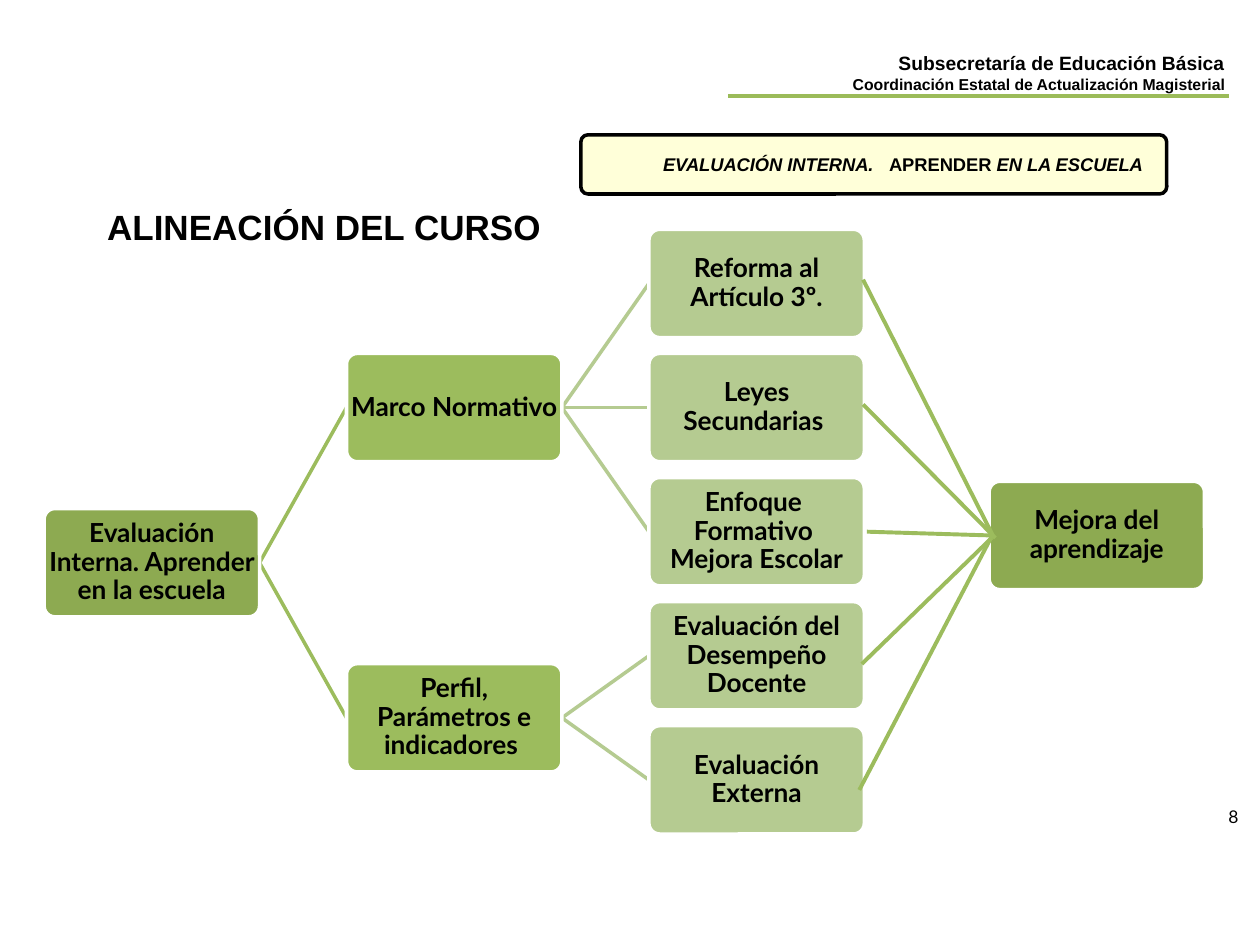
from dataclasses import dataclass

from lxml import etree
from pptx import Presentation
from pptx.dml.color import RGBColor
from pptx.enum import shapes, text
from pptx.oxml.ns import qn
from pptx.util import Inches, Pt


@dataclass(frozen=True)
class Theme:
    black: str = "000000"
    white: str = "FFFFFF"
    cream: str = "FFFFD9"
    rule: str = "9BBB59"
    levels: tuple = ("8DAA51", "9CBC5D", "B5CB91")
    heading: str = "Arial"
    body: str = "Lato"
    title_size: float = 20
    node_size: float = 15
    office_size: float = 11
    banner_size: float = 10.5
    number_size: float = 10
    unit_size: float = 9


THEME = Theme()
LEFT, CENTER, RIGHT = text.PP_ALIGN.LEFT, text.PP_ALIGN.CENTER, text.PP_ALIGN.RIGHT

TITLE = "ALINEACIÓN DEL CURSO"
OFFICES = [("Subsecretaría de Educación Básica", THEME.office_size),
           ("Coordinación Estatal de Actualización Magisterial", THEME.unit_size)]
BANNER = [("EVALUACIÓN INTERNA.   ", True), ("APRENDER", False), (" EN LA ESCUELA", True)]
PAGE_NUMBER = "8"
COURSE = ("Evaluación Interna. Aprender en la escuela", [
    ("Marco Normativo", [
        ("Reforma al Artículo 3º.", []),
        ("Leyes Secundarias ", []),
        ("Enfoque \vFormativo \vMejora Escolar", [])]),
    ("Perfil, Parámetros e indicadores ", [
        ("Evaluación del Desempeño Docente", []),
        ("Evaluación Externa", [])])])
GOAL = "Mejora del aprendizaje"
GOAL_LINKS = [((6.85, 2.22), (7.88, 4.25)), ((6.85, 3.21), (7.9, 4.27)),
              ((6.88, 4.22), (7.88, 4.25)), ((6.84, 5.27), (7.87, 4.27)),
              ((6.82, 6.27), (7.88, 4.24))]

NODE_W, NODE_H = 1.71, 0.86
TREE_LEFT, TREE_TOP = 0.35, 1.82
COLUMN_STEP, ROW_STEP = 2.4, 0.985
GOAL_AT = (7.85, 3.82)


def set_font(font, name, size, bold=True, italic=False):
    for key, value in dict(name=name, size=Pt(size), bold=bold, italic=italic).items():
        setattr(font, key, value)
    font.color.rgb = RGBColor.from_string(THEME.black)


def set_frame(frame, side=0.1, edge=0.05, anchor=text.MSO_ANCHOR.TOP):
    settings = dict(word_wrap=True, auto_size=text.MSO_AUTO_SIZE.NONE, vertical_anchor=anchor,
                    margin_left=Inches(side), margin_right=Inches(side),
                    margin_top=Inches(edge), margin_bottom=Inches(edge))
    for key, value in settings.items():
        setattr(frame, key, value)


def add_text(slide, box, lines, name, align=LEFT, bold=True):
    frame = slide.shapes.add_textbox(*map(Inches, box)).text_frame
    set_frame(frame)
    for index, (words, size) in enumerate(lines):
        paragraph = frame.add_paragraph() if index else frame.paragraphs[0]
        paragraph.text = words
        paragraph.alignment = align
        set_font(paragraph.font, name, size, bold)


def add_panel(slide, box, fill, line, corner):
    panel = slide.shapes.add_shape(shapes.MSO_SHAPE.ROUNDED_RECTANGLE, *map(Inches, box))
    panel.shadow.inherit = False
    panel.adjustments[0] = corner
    panel.fill.solid()
    panel.fill.fore_color.rgb = RGBColor.from_string(fill)
    panel.line.color.rgb = RGBColor.from_string(line)
    panel.line.width = Pt(2)
    return panel


def add_node(slide, words, left, top, fill):
    node = add_panel(slide, (left, top, NODE_W, NODE_H), fill, THEME.white, 0.1)
    set_frame(node.text_frame, 0.01, 0.01, text.MSO_ANCHOR.MIDDLE)
    paragraph = node.text_frame.paragraphs[0]
    paragraph.text = words
    paragraph.alignment = CENTER
    paragraph.line_spacing = 0.9
    set_font(paragraph.font, THEME.body, THEME.node_size)


def add_link(slide, start, end, color, width):
    link = slide.shapes.add_connector(shapes.MSO_CONNECTOR.STRAIGHT, *map(Inches, start + end))
    link.line.color.rgb = RGBColor.from_string(color)
    link.line.width = Pt(width)
    etree.SubElement(link._element.spPr, qn("a:effectLst"))


def place_tree(branch, level, row, nodes, links):
    words, children = branch
    left = TREE_LEFT + level * COLUMN_STEP
    tops = []
    for child in children:
        top, row = place_tree(child, level + 1, row, nodes, links)
        tops.append(top)
    if tops:
        top = (tops[0] + tops[-1]) / 2
    else:
        top = TREE_TOP + row * ROW_STEP
        row += 1
    middle = NODE_H / 2
    for child_top in tops:
        links.append(((left + NODE_W, top + middle),
                      (left + COLUMN_STEP, child_top + middle), THEME.levels[level + 1]))
    nodes.append((words, left, top, THEME.levels[level]))
    return top, row


def main():
    deck = Presentation()
    deck.slide_width, deck.slide_height = Inches(10), Inches(7.5)
    slide = deck.slides.add_slide(deck.slide_layouts[5])

    title = slide.shapes.title
    for key, value in zip(("left", "top", "width", "height"), (0.75, 1.58, 6.54, 0.44)):
        setattr(title, key, Inches(value))
    set_frame(title.text_frame)
    heading = title.text_frame.paragraphs[0]
    heading.text = TITLE
    heading.alignment = LEFT
    set_font(heading.font, THEME.heading, THEME.title_size)

    add_text(slide, (4.03, 0.36, 5.79, 0.44), OFFICES, THEME.heading, RIGHT)
    add_link(slide, (9.75, 0.76), (5.78, 0.76), THEME.rule, 2.25)
    add_text(slide, (9.65, 6.35, 0.35, 0.27), [(PAGE_NUMBER, THEME.number_size)],
             THEME.body, bold=False)

    banner = add_panel(slide, (4.61, 1.07, 4.65, 0.47), THEME.cream, THEME.black, 0.12)
    set_frame(banner.text_frame, 0.17, 0.05, text.MSO_ANCHOR.MIDDLE)
    slogan = banner.text_frame.paragraphs[0]
    slogan.alignment = RIGHT
    for words, italic in BANNER:
        run = slogan.add_run()
        run.text = words
        set_font(run.font, THEME.heading, THEME.banner_size, italic=italic)

    nodes, links = [], []
    place_tree(COURSE, 0, 0, nodes, links)
    for start, end, color in links:
        add_link(slide, start, end, color, 2)
    for node in nodes:
        add_node(slide, *node)
    add_node(slide, GOAL, *GOAL_AT, THEME.levels[0])
    for start, end in GOAL_LINKS:
        add_link(slide, start, end, THEME.levels[1], 2.25)

    deck.save("out.pptx")


if __name__ == "__main__":
    main()
